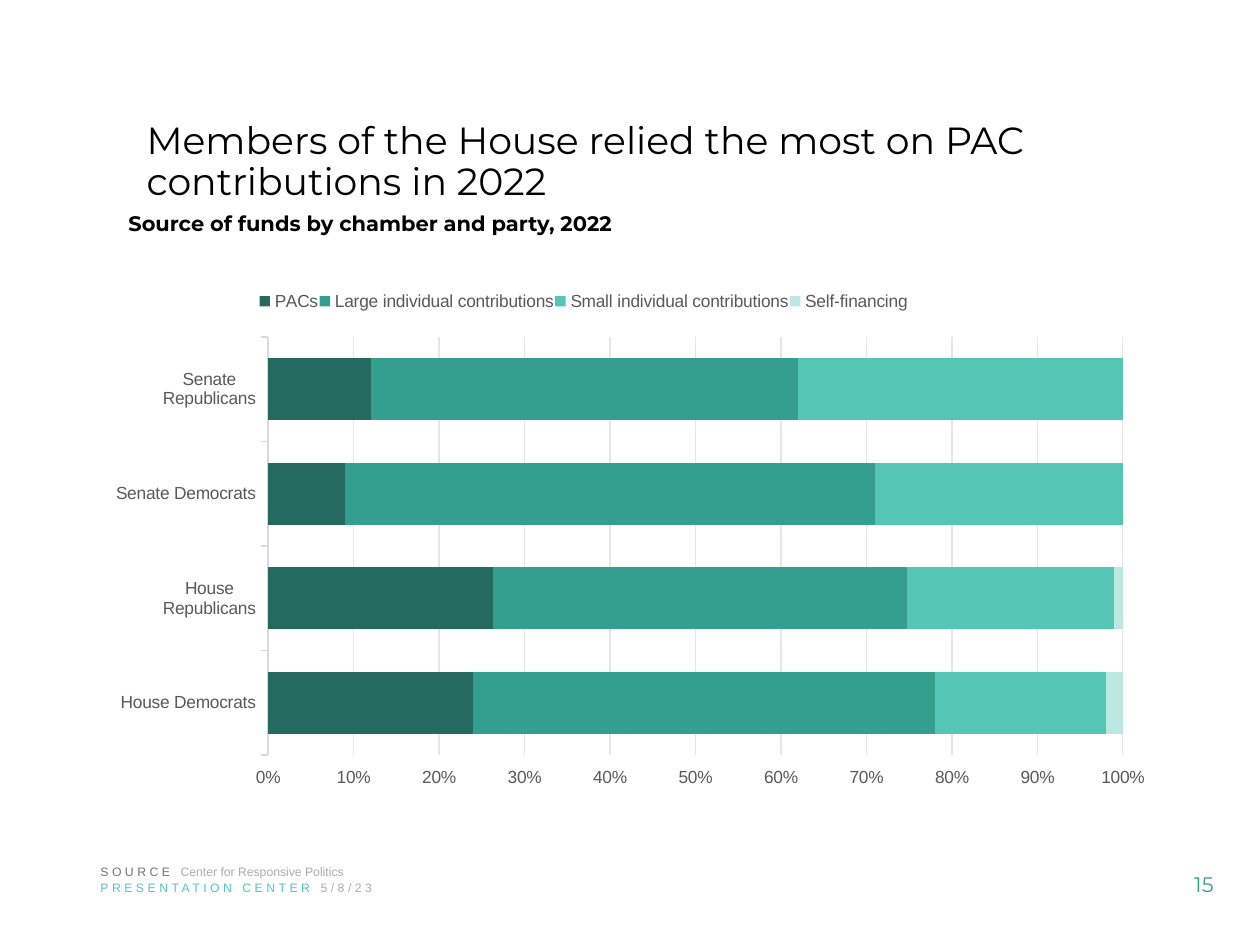
import pptx
import pptx.chart.data
import pptx.dml.color
import pptx.enum.chart
import pptx.enum.text
import pptx.oxml
import pptx.oxml.ns
import pptx.util

RGBColor = pptx.dml.color.RGBColor
BLACK = RGBColor(0x00, 0x00, 0x00)
DARK_GRAY = RGBColor(0x59, 0x59, 0x59)
MID_GRAY = RGBColor(0x76, 0x71, 0x71)
LIGHT_GRAY = RGBColor(0xAF, 0xAB, 0xAB)
AXIS_GRAY = RGBColor(0xD9, 0xD9, 0xD9)
GRID_GRAY = RGBColor(0xE7, 0xE6, 0xE6)
DEEP_TEAL = RGBColor(0x24, 0x6A, 0x5F)
TEAL = RGBColor(0x35, 0x9F, 0x8F)
AQUA = RGBColor(0x55, 0xC6, 0xB5)
PALE_AQUA = RGBColor(0xBB, 0xE8, 0xE1)

PIXEL = pptx.util.Inches(1) / 126
ANCHOR = pptx.enum.text.MSO_ANCHOR
ALIGN = pptx.enum.text.PP_ALIGN


class SlideBuilder:
    """Holds the style and the current slide."""

    heading_font = "Montserrat"
    body_font = "Arial"

    def __init__(self, presentation):
        title_only = presentation.slide_layouts[5]
        self.slide = presentation.slides.add_slide(title_only)

    def box(self, *lengths):
        return [round(length * PIXEL) for length in lengths]

    def apply(self, target, values):
        for name, value in values.items():
            setattr(target, name, value)

    def font(self, font, name, size, color, bold=False):
        self.apply(font, {"name": name, "size": pptx.util.Pt(size), "bold": bold})
        font.color.rgb = color

    def fill_text(self, shape, runs, name, size, bold=False, anchor=ANCHOR.TOP, **paragraph_format):
        """Each run is (text, color, letter spacing in points)."""
        self.apply(shape.text_frame, {
            "word_wrap": True,
            "auto_size": pptx.enum.text.MSO_AUTO_SIZE.NONE,
            "vertical_anchor": anchor,
        })
        paragraph = shape.text_frame.paragraphs[0]
        self.apply(paragraph, paragraph_format)
        for text, color, spacing in runs:
            run = paragraph.add_run()
            run.text = text
            self.font(run.font, name, size, color, bold)
            if spacing:
                run.font._element.set("spc", str(spacing * 100))

    def title(self, text, *lengths):
        shape = self.slide.shapes.title
        self.apply(shape, dict(zip(("left", "top", "width", "height"), self.box(*lengths))))
        self.fill_text(shape, [(text, BLACK, 0)], self.heading_font, 21.6,
                       anchor=ANCHOR.MIDDLE, alignment=ALIGN.LEFT, line_spacing=0.9)

    def text(self, runs, lengths, name, size, **options):
        shape = self.slide.shapes.add_textbox(*self.box(*lengths))
        self.fill_text(shape, runs, name, size, **options)

    def layout(self, element, x, y, width, height, inner=False):
        """Places a chart part by fractions of the chart's size."""
        target = '<c:layoutTarget val="inner"/>' if inner else ""
        fractions = f'<c:x val="{x}"/><c:y val="{y}"/><c:w val="{width}"/><c:h val="{height}"/>'
        layout = pptx.oxml.parse_xml(
            f'<c:layout {pptx.oxml.ns.nsdecls("c")}><c:manualLayout>{target}'
            f'<c:xMode val="edge"/><c:yMode val="edge"/>{fractions}</c:manualLayout></c:layout>')
        for old in element.findall(pptx.oxml.ns.qn("c:layout")):
            element.remove(old)
        element.insert(0 if inner else 1, layout)

    def line(self, line, color):
        line.color.rgb = color
        line.width = pptx.util.Pt(0.75)

    def stacked_bars(self, categories, series_rows, *lengths):
        data = pptx.chart.data.CategoryChartData(number_format="General")
        data.categories = categories
        for name, values, _ in series_rows:
            data.add_series(name, values)
        chart = self.slide.shapes.add_chart(
            pptx.enum.chart.XL_CHART_TYPE.BAR_STACKED_100, *self.box(*lengths), data).chart
        self.font(chart.font, self.body_font, 10, BLACK)
        self.apply(chart, {"has_title": False, "has_legend": True})

        # Bars
        plot = chart.plots[0]
        self.apply(plot, {"gap_width": 69, "overlap": 100, "vary_by_categories": False})
        for series, (_, _, color) in zip(plot.series, series_rows):
            series.format.fill.solid()
            series.format.fill.fore_color.rgb = color

        # Axes
        for axis in (chart.category_axis, chart.value_axis):
            axis.major_tick_mark = pptx.enum.chart.XL_TICK_MARK.OUTSIDE
            self.font(axis.tick_labels.font, self.body_font, 10, DARK_GRAY)
        self.line(chart.category_axis.format.line, AXIS_GRAY)
        value_axis = chart.value_axis
        self.apply(value_axis, {"minimum_scale": 0, "maximum_scale": 1, "major_unit": 0.1})
        self.apply(value_axis.tick_labels, {"number_format": "0%", "number_format_is_linked": False})
        value_axis.format.line.fill.background()
        self.line(value_axis.major_gridlines.format.line, GRID_GRAY)

        # Legend above the bars
        self.apply(chart.legend, {
            "position": pptx.enum.chart.XL_LEGEND_POSITION.TOP,
            "include_in_layout": False,
        })
        self.font(chart.legend.font, self.body_font, 10, DARK_GRAY)
        self.layout(chart.legend._element, 0.13, 0, 0.64, 0.06)
        plot_area = chart._chartSpace.chart.plotArea
        self.layout(plot_area, 0.14, 0.1, 0.84, 0.82, inner=True)


def main():
    presentation = pptx.Presentation()
    presentation.slide_width = pptx.util.Inches(10)
    presentation.slide_height = pptx.util.Inches(7.5)
    builder = SlideBuilder(presentation)
    heading, body = builder.heading_font, builder.body_font

    # Headings
    builder.title("Members of the House relied the most on PAC contributions in 2022",
                  134, 113, 1012, 100)
    builder.text([("Source of funds by chamber and party, 2022", BLACK, 0)],
                 (116, 204, 990, 44), heading, 12, bold=True)

    # Funding chart
    builder.stacked_bars(
        ["House Democrats", "House Republicans", "Senate Democrats", "Senate Republicans"],
        [
            ("PACs", (24, 26, 9, 12), DEEP_TEAL),
            ("Large individual contributions", (54, 48, 62, 50), TEAL),
            ("Small individual contributions", (20, 24, 29, 38), AQUA),
            ("Self-financing", (2, 1, 0, 0), PALE_AQUA),
        ],
        116, 286, 1029, 510)

    # Footer
    builder.text([("SOURCE ", MID_GRAY, 2), ("Center for Responsive Politics", LIGHT_GRAY, 0)],
                 (88, 858, 611, 28), body, 7)
    builder.text([("PRESENTATION CENTER ", AQUA, 2), ("5/8/23", LIGHT_GRAY, 2)],
                 (88, 874, 370, 28), body, 7)
    builder.text([("15", TEAL, 0)], (1148, 859, 112, 50), heading, 12,
                 anchor=ANCHOR.MIDDLE, alignment=ALIGN.CENTER)

    presentation.save("out.pptx")


if __name__ == "__main__":
    main()
